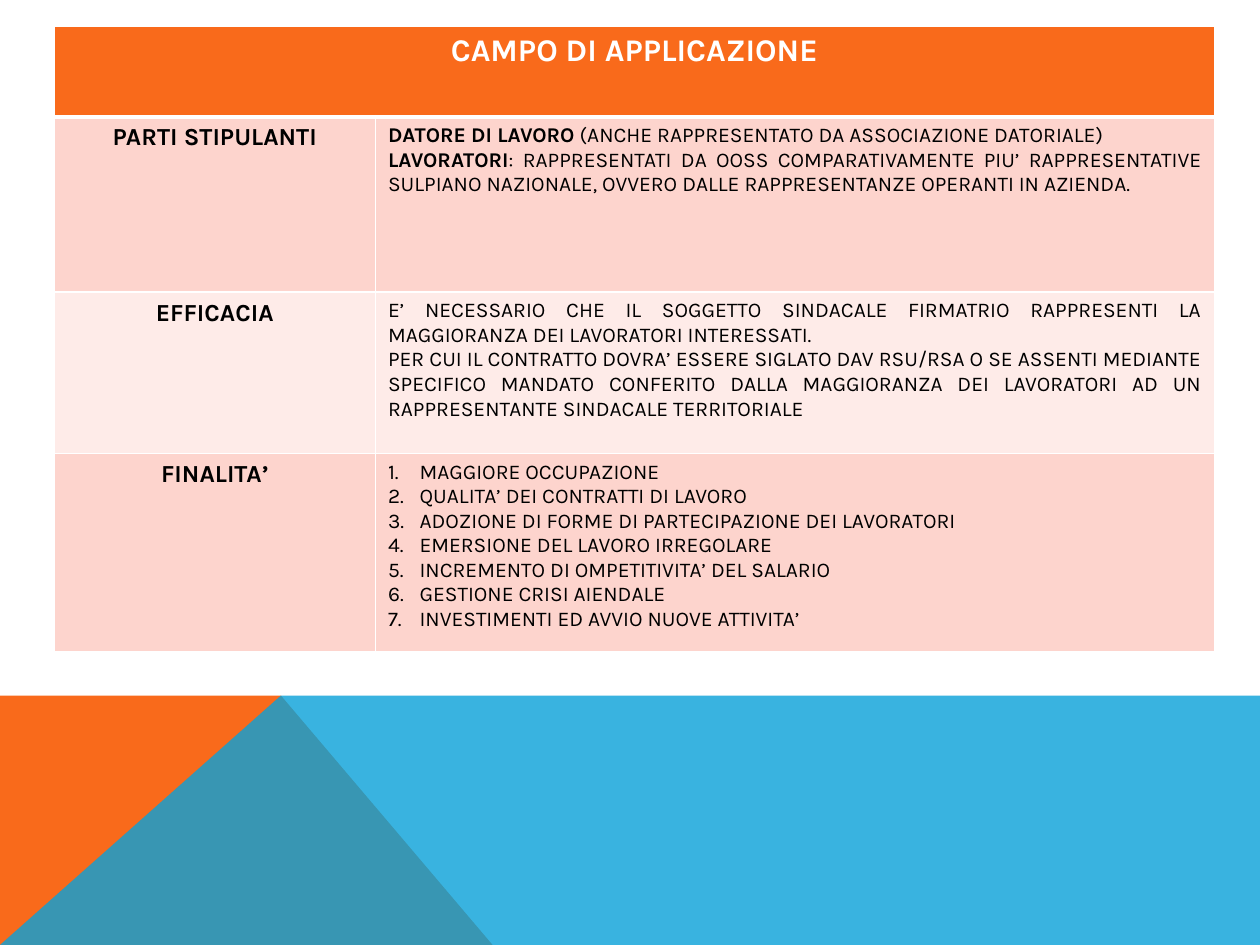
from lxml import etree
from pptx import Presentation
from pptx import util as u
from pptx.dml.color import RGBColor
from pptx.enum import text
from pptx.oxml import ns

FONT = "Karla"
WHITE, BLACK, ORANGE, BLUE = "FFFFFF", "000000", "F96A1B", "08A1D9"
ROSE, PALE_ROSE = "FDD4CD", "FEEBE8"
COLUMN_WIDTHS = (2.55, 6.66)
ROW_HEIGHTS = (0.72, 1.39, 1.28, 1.57)

PARTIES = [
    [("DATORE DI LAVORO", True),
     (" (ANCHE RAPPRESENTATO DA ASSOCIAZIONE DATORIALE)", False)],
    [("LAVORATORI", True),
     (": RAPPRESENTATI DA OOSS COMPARATIVAMENTE PIU’ RAPPRESENTATIVE SULPIANO "
      "NAZIONALE, OVVERO DALLE RAPPRESENTANZE OPERANTI IN AZIENDA.", False)],
]
EFFECTIVENESS = [
    [("E’ NECESSARIO CHE IL SOGGETTO SINDACALE FIRMATRIO RAPPRESENTI LA "
      "MAGGIORANZA DEI LAVORATORI INTERESSATI.", False)],
    [("PER CUI IL CONTRATTO DOVRA’ ESSERE SIGLATO DAV RSU/RSA O SE ASSENTI "
      "MEDIANTE SPECIFICO MANDATO CONFERITO DALLA MAGGIORANZA DEI LAVORATORI AD "
      "UN RAPPRESENTANTE SINDACALE TERRITORIALE", False)],
]
AIMS = [[(aim, False)] for aim in (
    "MAGGIORE OCCUPAZIONE",
    "QUALITA’ DEI CONTRATTI DI LAVORO",
    "ADOZIONE DI FORME DI PARTECIPAZIONE DEI LAVORATORI",
    "EMERSIONE DEL LAVORO IRREGOLARE",
    "INCREMENTO DI OMPETITIVITA’ DEL SALARIO",
    "GESTIONE CRISI AIENDALE",
    "INVESTIMENTI ED AVVIO NUOVE ATTIVITA’",
)]
ROWS = [
    ("PARTI STIPULANTI", PARTIES, ROSE, False),
    ("EFFICACIA", EFFECTIVENESS, PALE_ROSE, False),
    ("FINALITA’", AIMS, ROSE, True),
]


def set_fill(fill, color):
    """Make a fill solid in a hex colour."""
    fill.solid()
    fill.fore_color.rgb = RGBColor.from_string(color)


def add_polygon(slide, points, color, opacity=100):
    """Draw a closed outline without a line, from points in inches."""
    corners = [(u.Inches(x), u.Inches(y)) for x, y in points]
    builder = slide.shapes.build_freeform(*corners[0])
    builder.add_line_segments(corners[1:], close=True)
    shape = builder.convert_to_shape()
    shape.shadow.inherit = False
    shape.line.fill.background()
    set_fill(shape.fill, color)
    if opacity < 100:
        color_node = shape.fill._xPr.find(".//" + ns.qn("a:srgbClr"))
        etree.SubElement(color_node, ns.qn("a:alpha"), val=str(opacity * 1000))


def format_cell(cell, color, bottom=1):
    """Give a cell white borders and a solid fill."""
    properties = cell._tc.get_or_add_tcPr()
    for side, width in (("L", 1), ("R", 1), ("T", 1), ("B", bottom)):
        line = etree.SubElement(properties, ns.qn(f"a:ln{side}"), w=str(u.Pt(width)))
        solid = etree.SubElement(line, ns.qn("a:solidFill"))
        etree.SubElement(solid, ns.qn("a:srgbClr"), val=WHITE)
    set_fill(cell.fill, color)


def number_paragraph(paragraph):
    """Number a paragraph with a hanging indent."""
    properties = paragraph._p.get_or_add_pPr()
    properties.set("marL", str(u.Inches(0.25)))
    properties.set("indent", str(u.Inches(-0.25)))
    etree.SubElement(properties, ns.qn("a:buFont"), typeface="+mj-lt")
    etree.SubElement(properties, ns.qn("a:buAutoNum"), type="arabicPeriod")


def write_cell(cell, paragraphs, size, alignment, color=BLACK, numbered=False):
    """Write paragraphs of (wording, bold) runs into a cell."""
    frame = cell.text_frame
    for index, runs in enumerate(paragraphs):
        paragraph = frame.add_paragraph() if index else frame.paragraphs[0]
        paragraph.alignment = alignment
        if numbered:
            number_paragraph(paragraph)
        for wording, bold in runs:
            run = paragraph.add_run()
            run.text = wording
            run.font.name = FONT
            run.font.size = u.Pt(size)
            run.font.bold = bold
            run.font.color.rgb = RGBColor.from_string(color)


def add_scope_table(slide):
    """Add the table with a merged heading and three labelled rows."""
    table = slide.shapes.add_table(
        len(ROW_HEIGHTS), len(COLUMN_WIDTHS), u.Inches(0.43), u.Inches(0.21),
        u.Inches(sum(COLUMN_WIDTHS)), u.Inches(sum(ROW_HEIGHTS))).table
    for column, width in zip(table.columns, COLUMN_WIDTHS):
        column.width = u.Inches(width)
    for row, height in zip(table.rows, ROW_HEIGHTS):
        row.height = u.Inches(height)

    center, justify = text.PP_ALIGN.CENTER, text.PP_ALIGN.JUSTIFY
    heading = table.cell(0, 0)
    heading.merge(table.cell(0, 1))
    for cell in table.rows[0].cells:
        format_cell(cell, ORANGE, bottom=3)
    write_cell(heading, [[("CAMPO DI APPLICAZIONE", True)]], 18, center, WHITE)

    for index, (label, paragraphs, color, numbered) in enumerate(ROWS, 1):
        label_cell, body_cell = table.cell(index, 0), table.cell(index, 1)
        for cell in (label_cell, body_cell):
            format_cell(cell, color)
        write_cell(label_cell, [[(label, True)]], 14, center)
        write_cell(body_cell, paragraphs, 12, justify, numbered=numbered)


def main():
    """Build the slide and save it."""
    presentation = Presentation()
    presentation.slide_width, presentation.slide_height = u.Inches(10), u.Inches(7.5)
    slide = presentation.slides.add_slide(presentation.slide_layouts[6])
    set_fill(slide.background.fill, WHITE)
    add_polygon(slide, [(0, 7.5), (0, 5.52), (2.23, 5.52), (3.91, 7.5)], ORANGE)
    add_polygon(slide, [(0, 7.5), (2.23, 5.52), (10, 5.52), (10, 7.5)], BLUE, 80)
    add_scope_table(slide)
    presentation.save("out.pptx")


if __name__ == "__main__":
    main()
